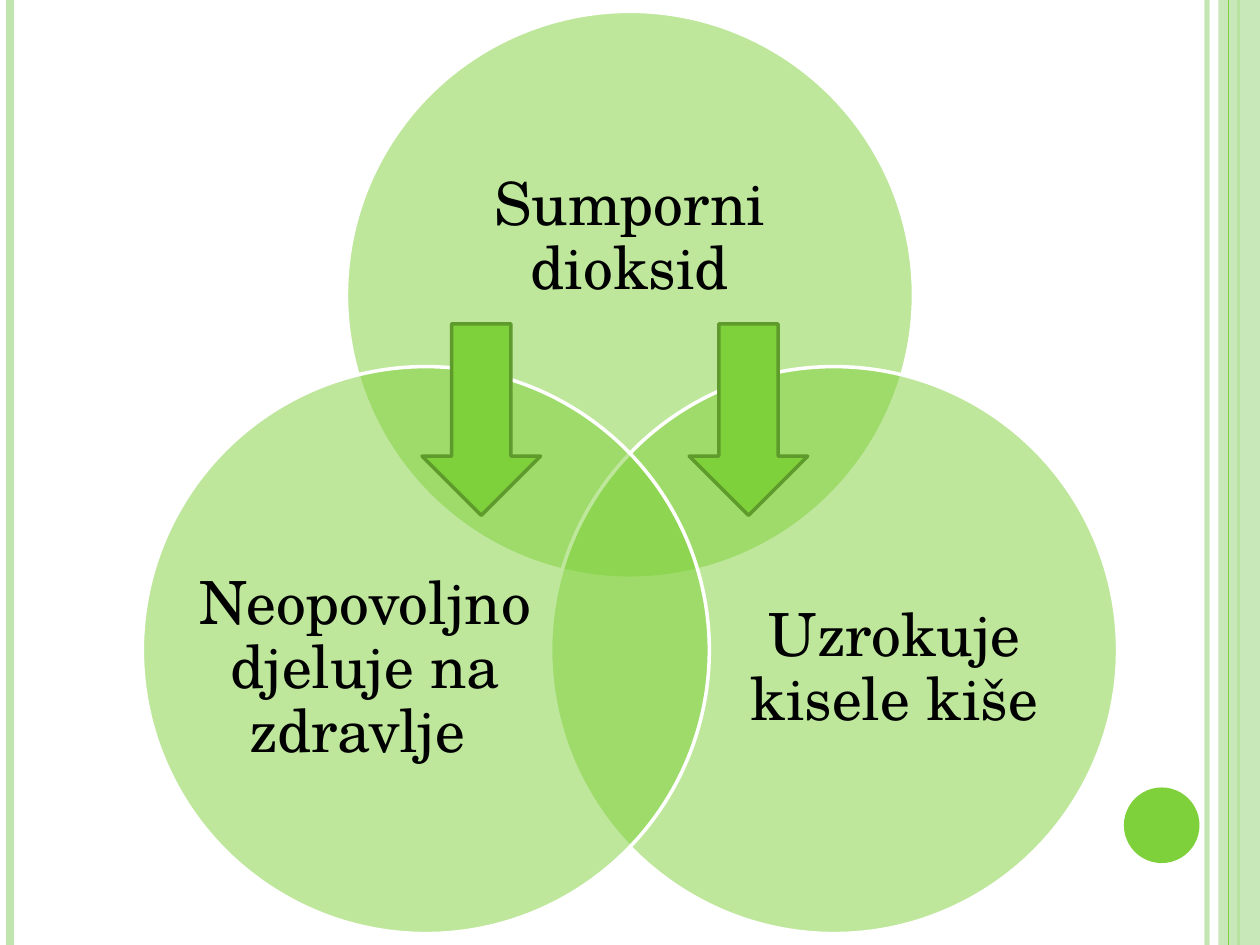
from lxml import etree
from pptx import Presentation
from pptx.dml.color import RGBColor
from pptx.enum.shapes import MSO_CONNECTOR, MSO_SHAPE
from pptx.enum.text import MSO_ANCHOR, PP_ALIGN
from pptx.oxml.ns import qn
from pptx.util import Inches, Pt

STRAIGHT = MSO_CONNECTOR.STRAIGHT
RECT, OVAL, DOWN_ARROW = MSO_SHAPE.RECTANGLE, MSO_SHAPE.OVAL, MSO_SHAPE.DOWN_ARROW
MIDDLE, CENTER = MSO_ANCHOR.MIDDLE, PP_ALIGN.CENTER

GREEN = RGBColor(0x7F, 0xD1, 0x3B)
DARK_GREEN = RGBColor(0x5E, 0x9B, 0x2C)
PALE_GREEN = RGBColor(0xC0, 0xE5, 0xAF)
WHITE = RGBColor(0xFF, 0xFF, 0xFF)
BLACK = RGBColor(0x00, 0x00, 0x00)


def set_alpha(obj, percent):
    """Set the opacity of the first solid colour in a shape or connector."""
    color = obj._element.spPr.find(".//" + qn("a:srgbClr"))
    etree.SubElement(color, qn("a:alpha"), val=str(percent * 1000))


def add_filled(kind, box, fill, line=None, alpha=100):
    sp = s.shapes.add_shape(kind, *map(Inches, box))
    sp.shadow.inherit = False
    sp.fill.solid()
    sp.fill.fore_color.rgb = fill
    if alpha < 100:
        set_alpha(sp, alpha)
    if line is None:
        sp.line.fill.background()
    else:
        sp.line.color.rgb = line
        sp.line.width = Pt(2)


prs = Presentation()
prs.slide_width, prs.slide_height = Inches(10), Inches(7.5)
s = prs.slides.add_slide(prs.slide_layouts[6])

# Side decoration: the band lies over the first three rules
rules = [
    (9.58, PALE_GREEN, 3, 93),
    (0.08, PALE_GREEN, 4.5, 100),
    (9.83, GREEN, 1.5, 100),
    (9.75, GREEN, 0.75, 100),
]
for x, color, width, alpha in rules:
    if x == 9.75:
        add_filled(RECT, (9.67, 0, 0.33, 7.5), PALE_GREEN, alpha=87)
    rule = s.shapes.add_connector(STRAIGHT, Inches(x), 0, Inches(x), Inches(7.5))
    rule.line.color.rgb = color
    rule.line.width = Pt(width)
    if alpha < 100:
        set_alpha(rule, alpha)
    etree.SubElement(rule._element.spPr, qn("a:effectLst"))
add_filled(OVAL, (8.92, 6.25, 0.6, 0.6), GREEN)

# Venn diagram: circle corner, label box, label
DIAMETER = 4.5
venn = [
    ((2.75, 0.09), (3.35, 0.88, 3.3, 2.02), "Sumporni dioksid"),
    ((4.37, 2.91), (5.75, 4.07, 2.7, 2.48), "Uzrokuje kisele kiše"),
    ((1.13, 2.91), (1.55, 4.07, 2.7, 2.48), "Neopovoljno djeluje na zdravlje "),
]
frame_format = {
    "word_wrap": True, "vertical_anchor": MIDDLE,
    "margin_left": 0, "margin_top": 0, "margin_right": 0, "margin_bottom": 0,
}
for corner, box, label in venn:
    add_filled(OVAL, (*corner, DIAMETER, DIAMETER), GREEN, WHITE, 50)
    tf = s.shapes.add_textbox(*map(Inches, box)).text_frame
    for name, value in frame_format.items():
        setattr(tf, name, value)
    p = tf.paragraphs[0]
    p.alignment = CENTER
    p.line_spacing = 0.9
    r = p.add_run()
    r.text = label
    r.font.name = "TeX Gyre Schola"
    r.font.size = Pt(34)
    r.font.color.rgb = BLACK

for x in (3.35, 5.47):
    add_filled(DOWN_ARROW, (x, 2.57, 0.94, 1.52), GREEN, DARK_GREEN)

prs.save("out.pptx")
